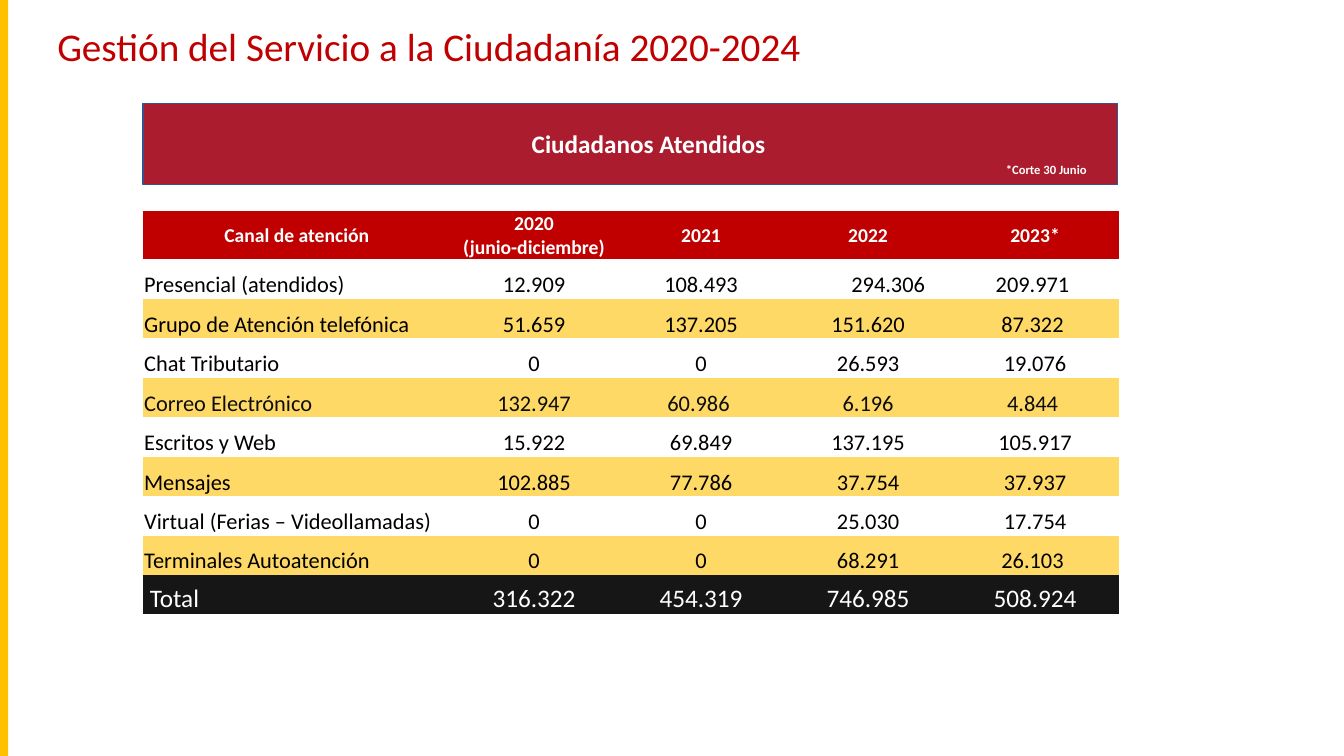
"""Build the slide on citizen service figures by channel."""
import pptx
import pptx.util
import pptx.dml.color
import pptx.enum.shapes
import pptx.enum.text

Pt = pptx.util.Pt
Align = pptx.enum.text.PP_ALIGN
Anchor = pptx.enum.text.MSO_ANCHOR

HUES = {
    "gold": "FFC000", "red": "C00000", "wine": "AA1C2E", "blue": "325491",
    "sand": "FFD966", "coal": "161616", "white": "FFFFFF", "black": "000000",
    "ink": "0D0D0D",
}
FONT = "Calibri"
PLAIN = "{2D5ABB26-0587-4C30-8999-92F81FD0307C}"

BARS = [
    (0, 0, 5.76, 540, "gold", None),
    (102.24, 74.16, 696.24, 57.6, "wine", "blue"),
]
LABELS = [
    ("Gestión del Servicio a la Ciudadanía 2020-2024",
     (33.84, -3.6, 696.24, 72.72), 28, "red", False, Align.LEFT, Anchor.MIDDLE),
    ("Ciudadanos Atendidos",
     (271.44, 87.84, 383.76, 28.8), 18, "white", True, Align.CENTER, Anchor.TOP),
    ("*Corte 30 Junio",
     (711.36, 112.32, 87.12, 18), 9, "white", True, Align.LEFT, Anchor.TOP),
]
ROWS = [
    ("Canal de atención", "2020\n(junio-diciembre)", "2021", "2022", "2023*"),
    ("Presencial (atendidos)", "12.909", "108.493", "294.306", "209.971 "),
    ("Grupo de Atención telefónica", "51.659", "137.205", "151.620", "87.322 "),
    ("Chat Tributario", "0", "0", "26.593", "19.076"),
    ("Correo Electrónico", "132.947", "60.986 ", "6.196", "4.844 "),
    ("Escritos y Web", "15.922", "69.849", "137.195", "105.917"),
    ("Mensajes", "102.885", "77.786", "37.754", "37.937"),
    ("Virtual (Ferias – Videollamadas)", "0", "0", "25.030", "17.754"),
    ("Terminales Autoatención", "0", "0", "68.291", "26.103 "),
    ("Total", "316.322", "454.319", "746.985", "508.924"),
]
LAST = len(ROWS) - 1
INK_ROW = 4
INDENTS = {(1, 3): 29.5, (LAST, 0): 4.75}
LEFT, TOP = 102.24, 150.48
FIRST_W, YEAR_W = 219.6, 119.3
HEAD_H, ROW_H = 34.8, 28.2


def color(name):
    return pptx.dml.color.RGBColor.from_string(HUES[name])


def write(frame, text, size, hue, bold, align):
    for i, line in enumerate(text.split("\n")):
        para = frame.paragraphs[0] if i == 0 else frame.add_paragraph()
        para.alignment = align
        run = para.add_run()
        run.text = line
        font = run.font
        font.name, font.size, font.bold = FONT, Pt(size), bold
        font.color.rgb = color(hue)


def add_bar(slide, x, y, w, h, fill, line):
    bar = slide.shapes.add_shape(
        pptx.enum.shapes.MSO_SHAPE.RECTANGLE, Pt(x), Pt(y), Pt(w), Pt(h))
    bar.shadow.inherit = False
    bar.fill.solid()
    bar.fill.fore_color.rgb = color(fill)
    if line:
        bar.line.color.rgb = color(line)
        bar.line.width = Pt(1)
    else:
        bar.line.fill.background()


def add_label(slide, text, box, size, hue, bold, align, anchor):
    frame = slide.shapes.add_textbox(*map(Pt, box)).text_frame
    frame.word_wrap = True
    frame.vertical_anchor = anchor
    write(frame, text, size, hue, bold, align)


def row_style(r):
    if r == 0:
        return "red", 14, "white"
    if r == LAST:
        return "coal", 18, "white"
    return ("sand" if r % 2 == 0 else None), 16, ("ink" if r == INK_ROW else "black")


def add_grid(slide):
    years = len(ROWS[0]) - 1
    shape = slide.shapes.add_table(
        len(ROWS), years + 1, Pt(LEFT), Pt(TOP),
        Pt(FIRST_W + years * YEAR_W), Pt(HEAD_H + LAST * ROW_H))
    grid = shape.table
    grid.first_row = grid.horz_banding = False
    for style in shape.element.iter("{*}tableStyleId"):
        style.text = PLAIN
    for c, col in enumerate(grid.columns):
        col.width = Pt(YEAR_W if c else FIRST_W)
    for r, row in enumerate(ROWS):
        grid.rows[r].height = Pt(ROW_H if r else HEAD_H)
        fill, size, hue = row_style(r)
        for c, text in enumerate(row):
            cell = grid.cell(r, c)
            cell.margin_left = Pt(INDENTS.get((r, c), 0.75))
            cell.margin_right = cell.margin_top = Pt(0.75)
            cell.margin_bottom = Pt(0)
            cell.vertical_anchor = Anchor.BOTTOM if r else Anchor.MIDDLE
            if fill:
                cell.fill.solid()
                cell.fill.fore_color.rgb = color(fill)
            else:
                cell.fill.background()
            align = Align.LEFT if r and c == 0 else Align.CENTER
            write(cell.text_frame, text, size, hue, r == 0, align)


def main():
    deck = pptx.Presentation()
    deck.slide_width, deck.slide_height = Pt(960), Pt(540)
    slide = deck.slides.add_slide(deck.slide_layouts[6])
    for bar in BARS:
        add_bar(slide, *bar)
    for label in LABELS:
        add_label(slide, *label)
    add_grid(slide)
    deck.save("out.pptx")


if __name__ == "__main__":
    main()
